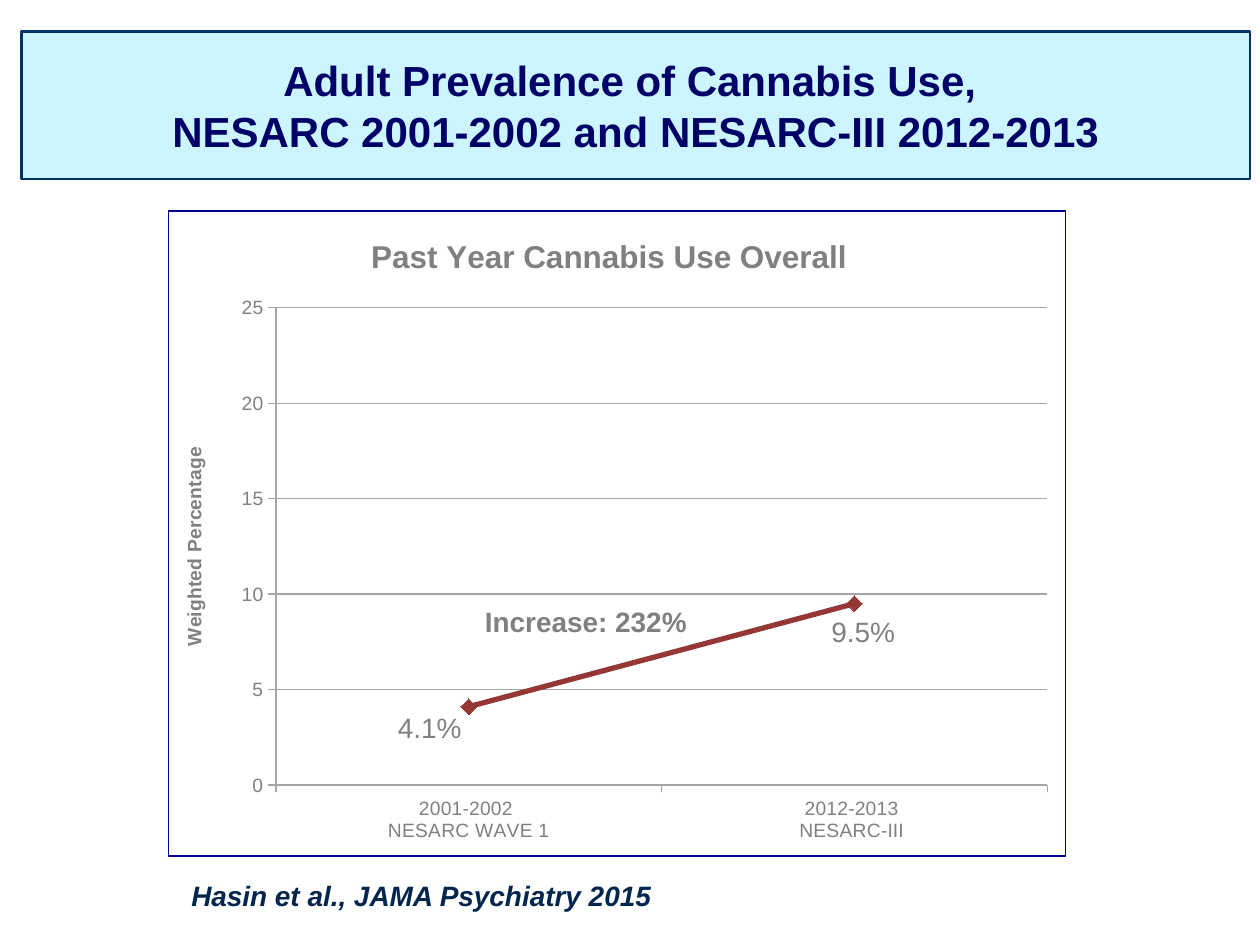
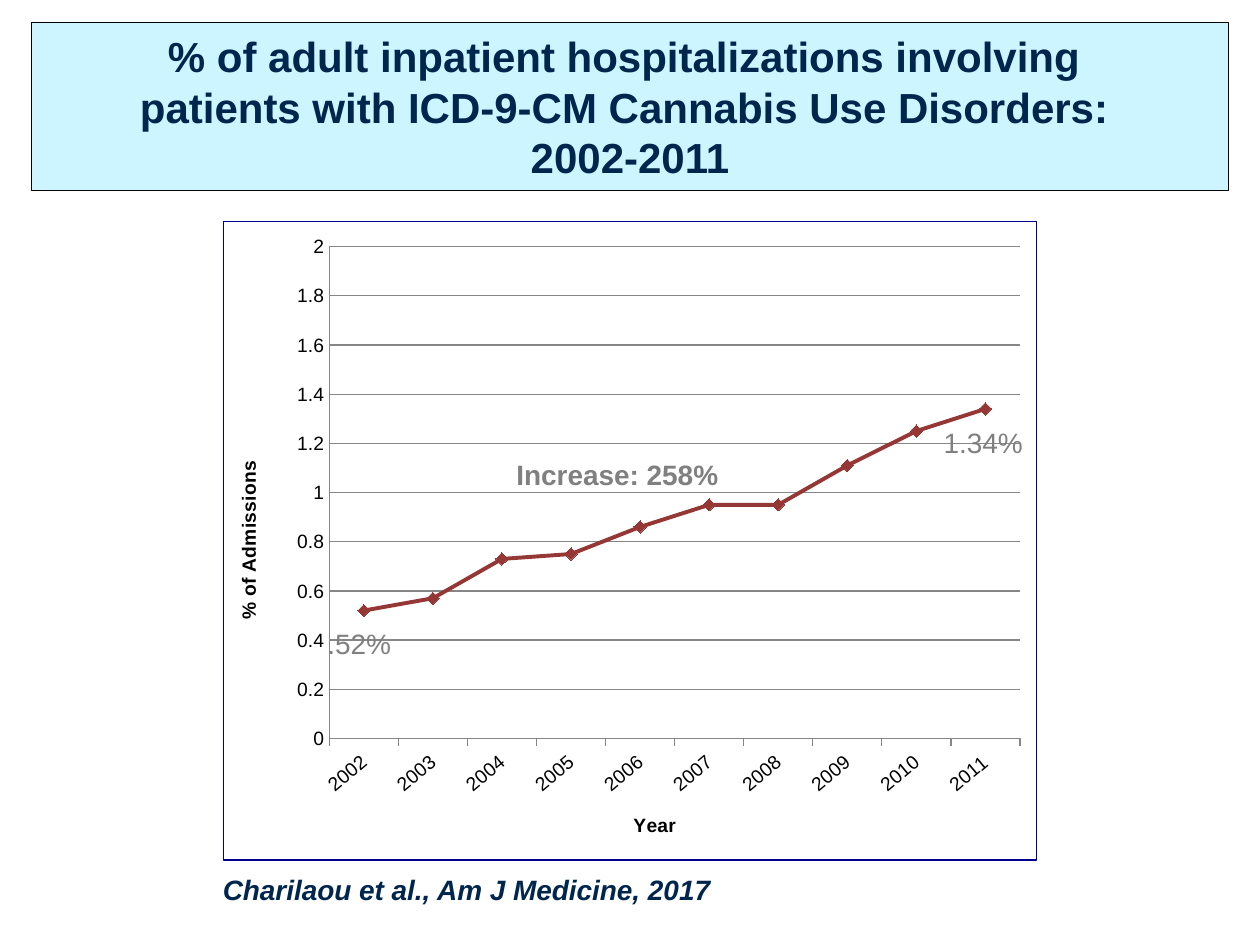
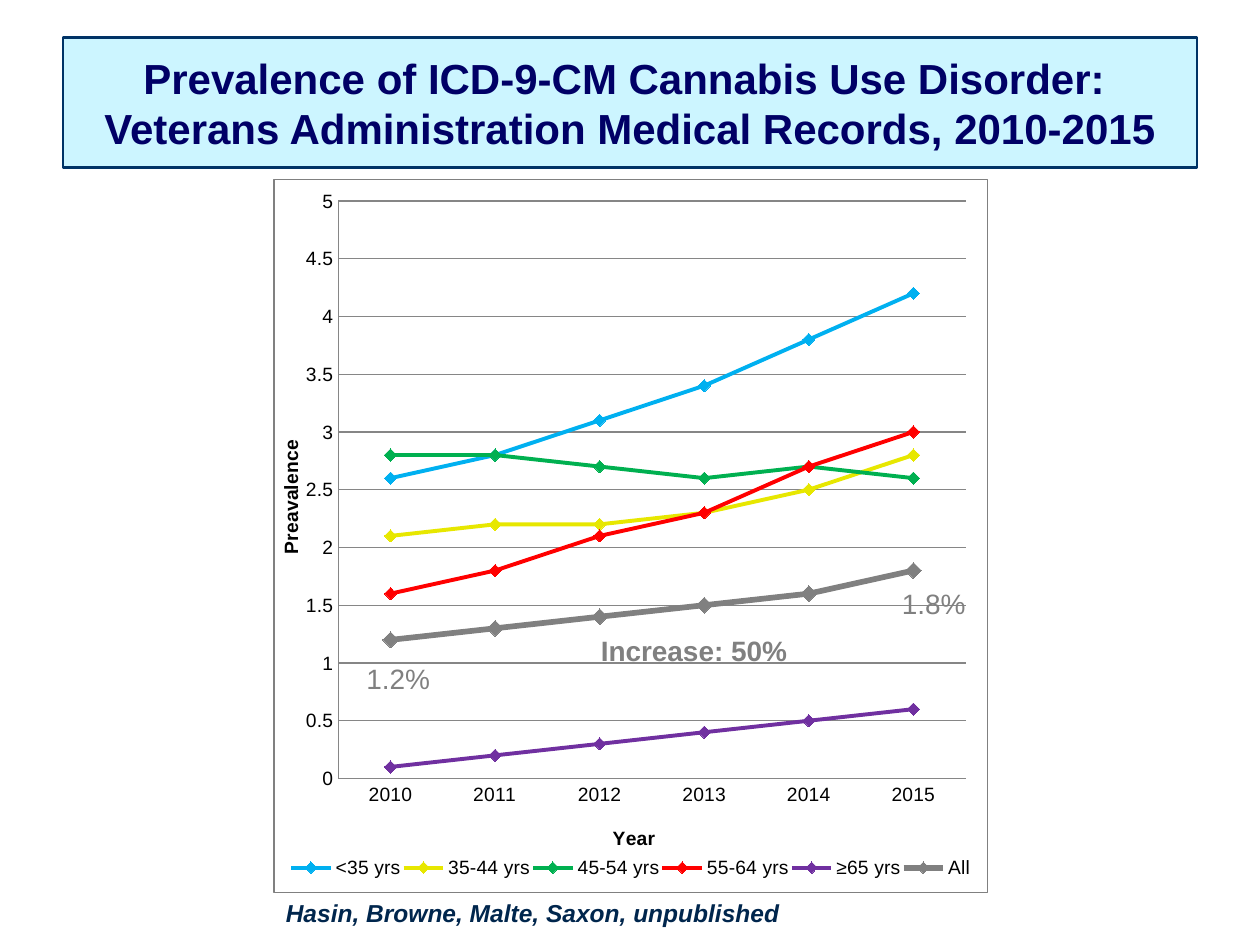
from pptx import Presentation
from pptx.chart.data import CategoryChartData
from pptx.dml.color import RGBColor
from pptx.enum.chart import XL_CHART_TYPE, XL_LEGEND_POSITION, XL_MARKER_STYLE, XL_TICK_MARK
from pptx.enum.text import MSO_ANCHOR, MSO_AUTO_SIZE, PP_ALIGN
from pptx.oxml import parse_xml
from pptx.oxml.ns import nsdecls, qn
from pptx.util import Inches, Pt

# Shared style
FONT = "Arial"
BAND, NAVY, INK = "CCF5FF", "000066", "00264D"
EDGE, FRAME, GRAY, GRID = "003366", "000090", "808080", "868686"
BLACK, WHITE, BRICK = "000000", "FFFFFF", "953735"
NOTE_SIZE = 16

# Content: boxes are (left, top, width, height) in inches,
# layouts are shares of the chart's size
SLIDES = [
    {
        "title": ["Adult Prevalence of Cannabis Use, ",
                  "NESARC 2001-2002 and NESARC-III 2012-2013"],
        "band": {"box": (0.17, 0.25, 9.75, 1.17), "color": NAVY, "edge": EDGE, "weight": 1.5},
        "chart": {
            "box": (1.33, 1.67, 7.13, 5.13), "plot": (0.12, 0.15, 0.86, 0.74),
            "heading": ("Past Year Cannabis Use Overall ", (0.22, 0.03)),
            "frame": FRAME, "color": GRAY, "grid": "A6A6A6",
            "categories": ["2001-2002 \nNESARC WAVE 1", "2012-2013 \nNESARC-III "],
            "series": [("Series 1", BRICK, 3, 9, (4.1, 9.5))],
            "scale": (25, 5), "ticks": ("category", "value"),
            "value_title": ("Weighted Percentage", (0.01, 0.36)),
        },
        "source": ("Hasin et al., JAMA Psychiatry 2015", (1.42, 6.92, 4, 0.37), 16),
        "increase": ("Increase: 232%", (3.75, 4.75, 1.82, 0.37)),
        "ends": [("4.1%", (3.06, 5.59, 0.71, 0.37)), ("9.5%", (6.5, 4.83, 0.71, 0.37))],
    },
    {
        "title": ["% of adult inpatient hospitalizations involving ",
                  "patients with ICD-9-CM Cannabis Use Disorders: ",
                  "2002-2011"],
        "band": {"box": (0.25, 0.18, 9.5, 1.33), "color": INK, "edge": BLACK, "weight": 0.75},
        "chart": {
            "box": (1.77, 1.75, 6.46, 5.08), "plot": (0.13, 0.04, 0.85, 0.77),
            "frame": FRAME, "color": BLACK, "grid": GRID,
            "categories": [str(year) for year in range(2002, 2012)],
            "series": [("Series 1", BRICK, 2.25, 7,
                        (0.52, 0.57, 0.73, 0.75, 0.86, 0.95, 0.95, 1.11, 1.25, 1.34))],
            "scale": (2, 0.2), "ticks": ("category",), "label_angle": -40,
            "value_title": ("% of Admissions", (0.01, 0.37)),
            "category_title": ("Year", (0.5, 0.92)),
        },
        "source": ("Charilaou et al., Am J Medicine, 2017", (1.67, 6.88, 4.33, 0.37), 16),
        "increase": ("Increase: 258%", (4, 3.58, 1.82, 0.37)),
        "ends": [(".52%", (2.5, 4.92, 0.71, 0.37)), ("1.34%", (7.39, 3.33, 0.84, 0.37))],
    },
    {
        "title": ["Prevalence of ICD-9-CM Cannabis Use Disorder: ",
                  "Veterans Administration Medical Records, 2010-2015"],
        "band": {"box": (0.5, 0.3, 9, 1.03), "color": NAVY, "edge": EDGE, "weight": 1.5},
        "chart": {
            "box": (2.17, 1.42, 5.67, 5.67), "plot": (0.09, 0.03, 0.88, 0.81),
            "frame": GRAY, "color": BLACK, "grid": GRID,
            "categories": [str(year) for year in range(2010, 2016)],
            "series": [
                ("<35 yrs", "00B0F0", 2.25, 7, (2.6, 2.8, 3.1, 3.4, 3.8, 4.2)),
                ("35-44 yrs", "E7E700", 2.25, 7, (2.1, 2.2, 2.2, 2.3, 2.5, 2.8)),
                ("45-54 yrs", "00B050", 2.25, 7, (2.8, 2.8, 2.7, 2.6, 2.7, 2.6)),
                ("55-64 yrs", "FF0000", 2.25, 7, (1.6, 1.8, 2.1, 2.3, 2.7, 3)),
                ("≥65 yrs", "7030A0", 2.25, 7, (0.1, 0.2, 0.3, 0.4, 0.5, 0.6)),
                ("All", GRAY, 3.25, 9, (1.2, 1.3, 1.4, 1.5, 1.6, 1.8)),
            ],
            "scale": (5, 0.5), "ticks": (), "legend": (0.02, 0.94, 0.96, 0.05),
            "value_title": ("Preavalence", (0, 0.36)),
            "category_title": ("Year", (0.47, 0.9)),
        },
        "source": ("Hasin, Browne, Malte, Saxon, unpublished", (2.17, 7.08, 4.24, 0.34), 14),
        "increase": ("Increase: 50%", (4.67, 4.98, 1.7, 0.37)),
        "ends": [("1.8%", (7.06, 4.61, 0.71, 0.37)), ("1.2%", (2.81, 5.2, 0.71, 0.37))],
    },
]


def rgb(color):
    return RGBColor.from_string(color)


def inches(box):
    return [Inches(length) for length in box]


def set_font(font, size, color, bold=False, italic=False):
    font.name, font.size, font.bold, font.italic = FONT, Pt(size), bold, italic
    font.color.rgb = rgb(color)


def set_line(line, color, weight=0.75):
    line.color.rgb = rgb(color)
    line.width = Pt(weight)


def set_fill(fill, color):
    fill.solid()
    fill.fore_color.rgb = rgb(color)


def add_title(page, lines, band):
    title = page.shapes.title
    title.left, title.top, title.width, title.height = inches(band["box"])
    set_fill(title.fill, BAND)
    set_line(title.line, band["edge"], band["weight"])
    frame = title.text_frame
    frame.auto_size = MSO_AUTO_SIZE.NONE
    frame.vertical_anchor = MSO_ANCHOR.MIDDLE
    para = frame.paragraphs[0]
    para.alignment = PP_ALIGN.CENTER
    for index, text in enumerate(lines):
        if index:
            para.add_line_break()
        span = para.add_run()
        span.text = text
        set_font(span.font, 24, band["color"], bold=True)


def add_note(page, text, box, size=NOTE_SIZE, color=GRAY, wrap=False, **style):
    frame = page.shapes.add_textbox(*inches(box)).text_frame
    frame.word_wrap = wrap
    frame.auto_size = MSO_AUTO_SIZE.SHAPE_TO_FIT_TEXT
    span = frame.paragraphs[0].add_run()
    span.text = text
    set_font(span.font, size, color, **style)


def layout_xml(shares, target=""):
    """Manual layout: left and top, then width and height if given."""
    names = ("x", "y", "w", "h")[:len(shares)]
    modes = "".join(f'<c:{name}Mode val="edge"/>' for name in "xy")
    values = "".join(f'<c:{name} val="{share}"/>' for name, share in zip(names, shares))
    return parse_xml(f'<c:layout {nsdecls("c")}><c:manualLayout>{target}{modes}{values}'
                     '</c:manualLayout></c:layout>')


def drop_layout(element):
    for layout in element.findall(qn("c:layout")):
        element.remove(layout)


def place_after(element, tag, shares):
    drop_layout(element)
    element.find(qn(tag)).addnext(layout_xml(shares))


def set_chart_title(title, text, place, size, color):
    span = title.text_frame.paragraphs[0].add_run()
    span.text = text
    set_font(span.font, size, color, bold=True)
    place_after(title._element, "c:tx", place)


def style_axis(axis, name, content):
    axis.major_tick_mark = XL_TICK_MARK.OUTSIDE if name in content["ticks"] else XL_TICK_MARK.NONE
    axis.minor_tick_mark = XL_TICK_MARK.NONE
    set_font(axis.tick_labels.font, 11, content["color"])
    set_line(axis.format.line, content["grid"])
    caption = content.get(name + "_title")
    axis.has_title = caption is not None
    if caption:
        set_chart_title(axis.axis_title, *caption, 11, content["color"])


def add_line_chart(page, content):
    data = CategoryChartData()
    data.categories = content["categories"]
    for name, _, _, _, values in content["series"]:
        data.add_series(name, values)
    chart = page.shapes.add_chart(XL_CHART_TYPE.LINE_MARKERS, *inches(content["box"]), data).chart
    set_font(chart.font, 10, GRAY)

    # Frame, plot area and heading
    chart_space = chart._chartSpace
    chart_space.find(qn("c:chart")).addnext(parse_xml(
        f'<c:spPr {nsdecls("c", "a")}><a:solidFill><a:srgbClr val="{WHITE}"/></a:solidFill>'
        f'<a:ln w="{Pt(0.75)}"><a:solidFill><a:srgbClr val="{content["frame"]}"/></a:solidFill>'
        '</a:ln></c:spPr>'))
    plot_area = chart_space.chart.plotArea
    drop_layout(plot_area)
    plot_area.insert(0, layout_xml(content["plot"], '<c:layoutTarget val="inner"/>'))
    chart.has_title = "heading" in content
    if chart.has_title:
        set_chart_title(chart.chart_title, *content["heading"], 18, GRAY)

    # Axes
    value_axis, category_axis = chart.value_axis, chart.category_axis
    style_axis(value_axis, "value", content)
    style_axis(category_axis, "category", content)
    value_axis.minimum_scale = 0
    value_axis.maximum_scale, value_axis.major_unit = content["scale"]
    value_axis.has_major_gridlines = True
    set_line(value_axis.major_gridlines.format.line, content["grid"])
    if "label_angle" in content:
        body = category_axis._element.find(qn("c:txPr")).find(qn("a:bodyPr"))
        body.set("rot", str(content["label_angle"] * 60000))

    # Legend in one row along the bottom
    chart.has_legend = "legend" in content
    if chart.has_legend:
        chart.legend.position = XL_LEGEND_POSITION.BOTTOM
        chart.legend.include_in_layout = False
        set_font(chart.legend.font, 11, BLACK)
        place_after(chart.legend._element, "c:legendPos", content["legend"])

    # Series
    chart.plots[0].vary_by_categories = False
    for series, (_, color, weight, marker_size, _) in zip(chart.plots[0].series, content["series"]):
        series.smooth = False
        set_line(series.format.line, color, weight)
        series.marker.style = XL_MARKER_STYLE.DIAMOND
        series.marker.size = marker_size
        set_fill(series.marker.format.fill, color)
        set_line(series.marker.format.line, color)


def main():
    deck = Presentation()
    deck.slide_width, deck.slide_height = Inches(10), Inches(7.5)
    title_only = deck.slide_layouts[5]
    for content in SLIDES:
        page = deck.slides.add_slide(title_only)
        add_title(page, content["title"], content["band"])
        add_line_chart(page, content["chart"])
        add_note(page, *content["source"], color=INK, wrap=True, bold=True, italic=True)
        add_note(page, *content["increase"], bold=True)
        for text, box in content["ends"]:
            add_note(page, text, box)
    deck.save("out.pptx")


if __name__ == "__main__":
    main()
